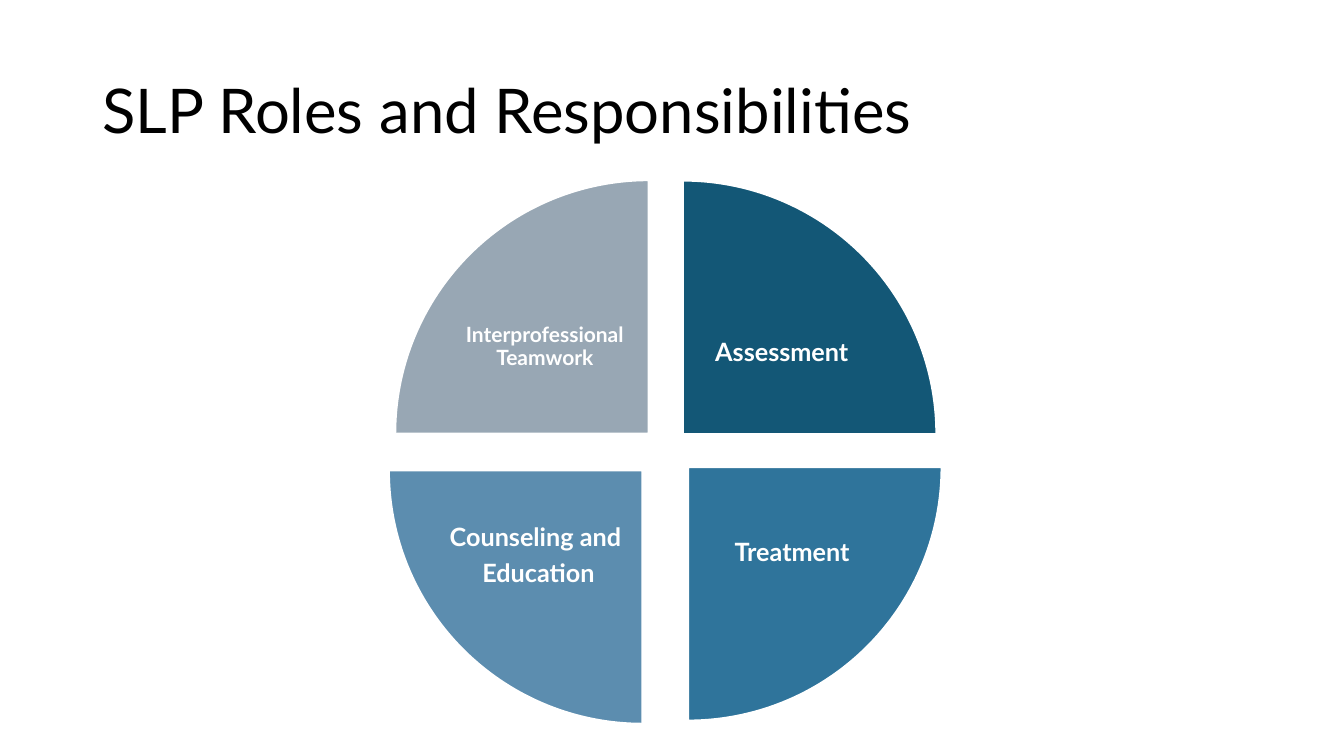
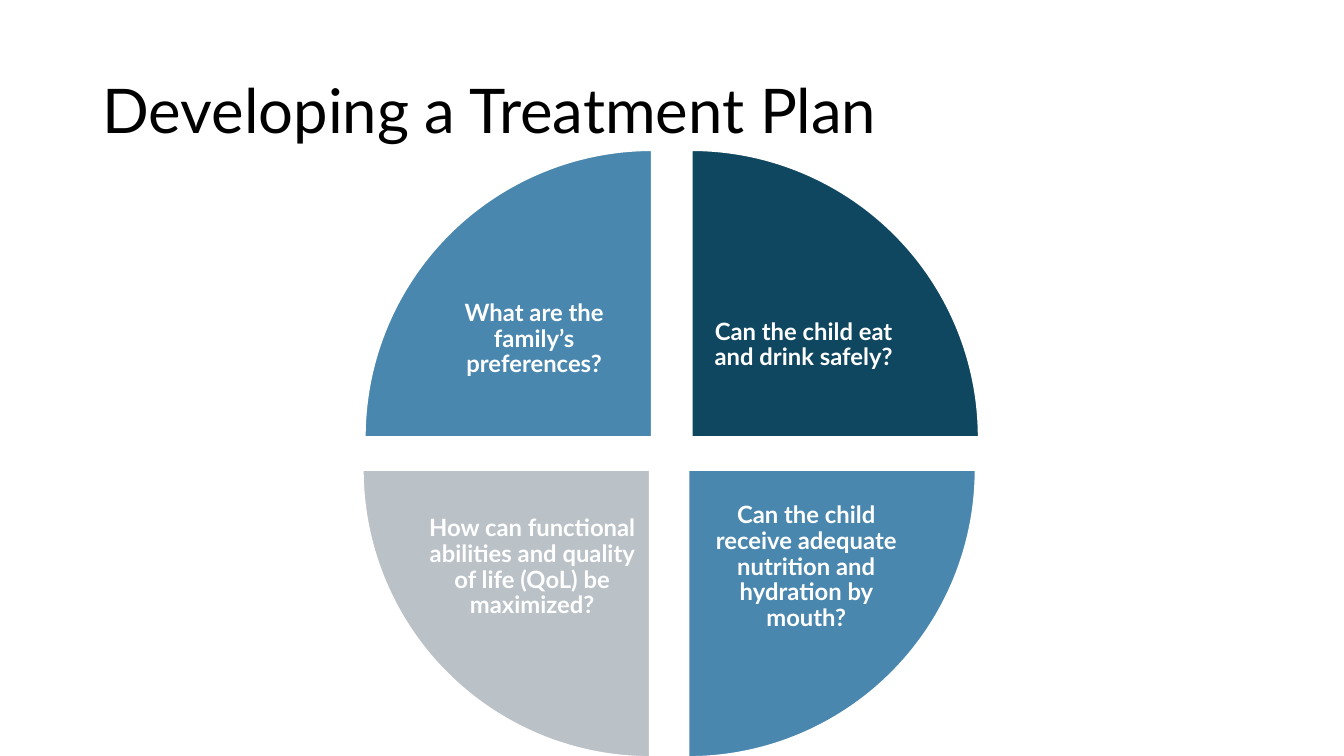
"""Build two slides, each showing four ideas as quarters of a split circle."""
from dataclasses import dataclass

from pptx import Presentation
from pptx.dml.color import RGBColor
from pptx.enum.shapes import MSO_SHAPE as Preset
from pptx.enum.text import MSO_ANCHOR as Anchor, PP_ALIGN as Align
from pptx.util import Cm, Pt

FONT = "Lato"
BLACK, WHITE = "000000", "FFFFFF"
QUARTER_TURN, FULL_TURN = 54, 216
LABEL_OFFSETS = [(0.51, 0.19), (0.52, 0.52), (0.11, 0.52), (0.11, 0.18)]
LABEL_WIDTH, LABEL_HEIGHT = 0.37, 0.3


@dataclass
class Quarter:
    """One idea: its wording, colour, circle corner in cm and text size."""
    wording: str
    colour: str
    left: float
    top: float
    size: int


ROLES = [
    Quarter("Assessment", "135776", 10.82, 4.55, 18),
    Quarter("Treatment", "2F749B", 10.95, 5.38, 18),
    Quarter("Counseling and \nEducation", "5C8DAF", 9.8, 5.46, 18),
    Quarter("Interprofessional Teamwork", "98A7B4", 9.96, 4.54, 15),
]
QUESTIONS = [
    Quarter("Can the child eat and drink safely?", "104760", 10.19, 3.78, 17),
    Quarter("Can the child receive adequate nutrition and hydration by mouth?",
            "4987AF", 10.11, 4.6, 17),
    Quarter("How can functional abilities and quality of life (QoL) be maximized?",
            "BAC1C7", 9.14, 4.6, 17),
    Quarter("What are the family’s preferences?", "4987AF", 9.19, 3.78, 17),
]


def rgb(colour):
    """Turn a hex string into a colour."""
    return RGBColor.from_string(colour)


def add_text(slide, wording, box, size, colour):
    """Add wrapped, vertically centred text and return its frame."""
    frame = slide.shapes.add_textbox(*map(Cm, box)).text_frame
    frame.word_wrap = True
    frame.vertical_anchor = Anchor.MIDDLE
    frame.text = wording
    for paragraph in frame.paragraphs:
        paragraph.line_spacing = 0.9
        paragraph.font.name = FONT
        paragraph.font.size = Pt(size)
        paragraph.font.color.rgb = rgb(colour)
    return frame


def add_wedge(slide, position, quarter, diameter):
    """Draw the quarter of the circle that belongs to this position."""
    wedge = slide.shapes.add_shape(
        Preset.PIE, *map(Cm, (quarter.left, quarter.top, diameter, diameter)))
    end = position * QUARTER_TURN
    wedge.adjustments[0] = (end - QUARTER_TURN) % FULL_TURN
    wedge.adjustments[1] = end
    wedge.shadow.inherit = False
    wedge.fill.solid()
    wedge.fill.fore_color.rgb = rgb(quarter.colour)
    wedge.line.color.rgb = rgb(WHITE)
    wedge.line.width = Pt(1.5)


def add_label(slide, position, quarter, diameter):
    """Write the bold label of a quarter, placed in proportion to the circle."""
    across, down = LABEL_OFFSETS[position]
    box = (quarter.left + across * diameter, quarter.top + down * diameter,
           LABEL_WIDTH * diameter, LABEL_HEIGHT * diameter)
    frame = add_text(slide, quarter.wording, box, quarter.size, WHITE)
    frame.margin_left = frame.margin_right = Cm(0.06)
    frame.margin_top = frame.margin_bottom = Cm(0.06)
    for paragraph in frame.paragraphs:
        paragraph.alignment = Align.CENTER
        paragraph.space_after = Pt(0.35 * quarter.size)
        paragraph.font.bold = True


def add_circle_slide(deck, title, quarters, diameter):
    """Add a slide with a title and a circle split in quarters."""
    slide = deck.slides.add_slide(deck.slide_layouts[6])
    add_text(slide, title, (2.33, 1.01, 29.21, 3.68), 44, BLACK)
    for position, quarter in enumerate(quarters):
        add_wedge(slide, position, quarter, diameter)
        add_label(slide, position, quarter, diameter)


def main():
    """Build and save the deck."""
    deck = Presentation()
    deck.slide_width, deck.slide_height = Cm(33.87), Cm(19.05)
    add_circle_slide(deck, "SLP Roles and Responsibilities", ROLES, 12.78)
    add_circle_slide(deck, "Developing a Treatment Plan", QUESTIONS, 14.48)
    deck.save("out.pptx")


if __name__ == "__main__":
    main()
